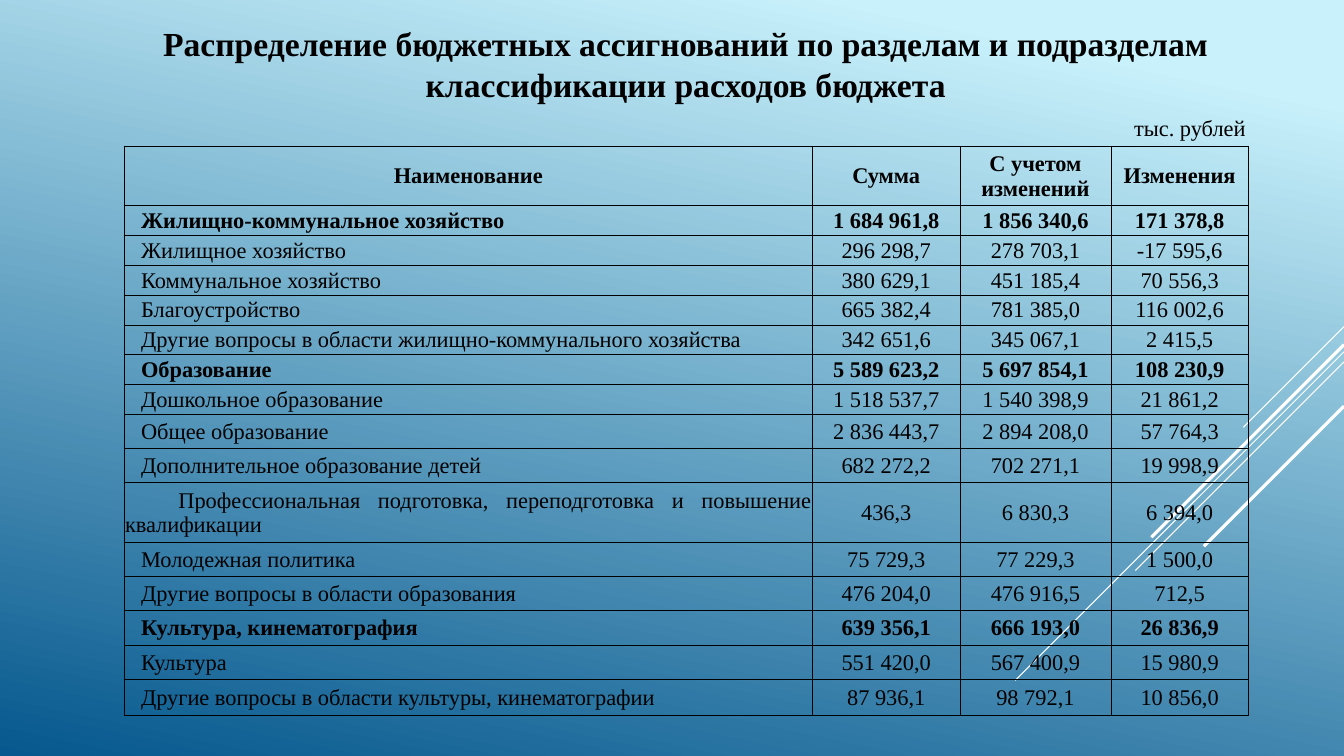
from lxml import etree
from pptx import Presentation, util as u
from pptx.dml.color import RGBColor
from pptx.enum import shapes, text
from pptx.oxml import ns

WIDTH, HEIGHT = 13.33, 7.5
FONT, BLACK, WHITE = "Times New Roman", "000000", "FFFFFF"

# Table grid, in inches
TABLE_LEFT, TABLE_TOP = 1.23, 1.45
COLUMNS = [6.83, 1.46, 1.5, 1.36]
TALL, LOW, MEDIUM = 0.59, 2.07 / 7, 0.34
ROW_HEIGHTS = [TALL] + [LOW] * 7 + [MEDIUM] * 2 + [TALL] + [MEDIUM] * 4 + [0.36]
INDENT, WRAPPED_INDENT = 0.16, 0.53

HEADINGS = ["Наименование", "Сумма", "С учетом изменений", "Изменения"]
SECTIONS = {"Жилищно-коммунальное хозяйство", "Образование", "Культура, кинематография"}
WRAPPED = "Профессиональная подготовка, переподготовка и повышение квалификации"
BUDGET = [
    ["Жилищно-коммунальное хозяйство", "1 684 961,8", "1 856 340,6", "171 378,8"],
    ["Жилищное хозяйство", "296 298,7", "278 703,1", "-17 595,6"],
    ["Коммунальное хозяйство", "380 629,1", "451 185,4", "70 556,3"],
    ["Благоустройство", "665 382,4", "781 385,0", "116 002,6"],
    ["Другие вопросы в области жилищно-коммунального хозяйства",
     "342 651,6", "345 067,1", "2 415,5"],
    ["Образование", "5 589 623,2", "5 697 854,1", "108 230,9"],
    ["Дошкольное образование", "1 518 537,7", "1 540 398,9", "21 861,2"],
    ["Общее образование", "2 836 443,7", "2 894 208,0", "57 764,3"],
    ["Дополнительное образование детей", "682 272,2", "702 271,1", "19 998,9"],
    [WRAPPED, "436,3", "6 830,3", "6 394,0"],
    ["Молодежная политика", "75 729,3", "77 229,3", "1 500,0"],
    ["Другие вопросы в области образования", "476 204,0", "476 916,5", "712,5"],
    ["Культура, кинематография", "639 356,1", "666 193,0", "26 836,9"],
    ["Культура", "551 420,0", "567 400,9", "15 980,9"],
    ["Другие вопросы в области культуры, кинематографии",
     "87 936,1", "98 792,1", "10 856,0"],
]

# Diagonal rays: start height on the right edge, length along each axis, line width
RAYS = [(3.24, 1, 0.75), (3.49, 3.26, 0.75), (3.59, 2.07, 0.75),
        (3.42, 1.91, 2.25), (4.03, 1.39, 2.25)]


def color(value):
    return RGBColor.from_string(value)


def place(shape, left, top, width, height):
    shape.left, shape.top = u.Inches(left), u.Inches(top)
    shape.width, shape.height = u.Inches(width), u.Inches(height)


def write(frame, words, size, bold=False, align=text.PP_ALIGN.CENTER):
    frame.word_wrap = True
    frame.text = words
    paragraph = frame.paragraphs[0]
    paragraph.alignment = align
    font = paragraph.font
    font.name, font.size, font.bold = FONT, u.Pt(size), bold
    font.color.rgb = color(BLACK)
    return paragraph


def paint_background(slide):
    fill = slide.background.fill
    fill.gradient()
    fill.gradient_angle = 258
    for stop, (position, shade) in zip(fill.gradient_stops,
                                       [(0.1, "C8F1FB"), (1, "06588E")]):
        stop.position, stop.color.rgb = position, color(shade)


def add_ray(slide, start, reach, weight):
    ray = slide.shapes.add_connector(
        shapes.MSO_CONNECTOR.STRAIGHT, u.Inches(WIDTH), u.Inches(start),
        u.Inches(WIDTH - reach), u.Inches(start + reach))
    ray.line.color.rgb, ray.line.width = color(WHITE), u.Pt(weight)
    etree.SubElement(ray._element.spPr, ns.qn("a:effectLst"))


def add_title(slide, words):
    title = slide.shapes.title
    place(title, 1.49, 0.18, 10.62, 0.91)
    write(title.text_frame, words, 24, bold=True)
    title.text_frame.vertical_anchor = text.MSO_ANCHOR.TOP
    title.text_frame.auto_size = text.MSO_AUTO_SIZE.NONE


def add_units(slide, words):
    units = slide.shapes.add_textbox(0, 0, 0, 0)
    place(units, 11.15, 1.08, 1.65, 0.37)
    write(units.text_frame, words, 16, align=text.PP_ALIGN.LEFT)


def outline(cell):
    properties = cell._tc.get_or_add_tcPr()
    for index, side in enumerate(["lnL", "lnR", "lnT", "lnB"]):
        border = etree.Element(ns.qn(f"a:{side}"), w=str(u.Pt(0.5)))
        solid = etree.SubElement(border, ns.qn("a:solidFill"))
        etree.SubElement(solid, ns.qn("a:srgbClr"), val=BLACK)
        properties.insert(index, border)


def fill_cell(cell, words, bold, align):
    cell.fill.background()
    outline(cell)
    cell.vertical_anchor = text.MSO_ANCHOR.MIDDLE
    cell.margin_left = cell.margin_right = cell.margin_top = u.Inches(0.01)
    cell.margin_bottom = 0
    return write(cell.text_frame, words, 16, bold, align)


def add_budget_table(slide):
    rows = [HEADINGS] + BUDGET
    table = slide.shapes.add_table(
        len(rows), len(COLUMNS), u.Inches(TABLE_LEFT), u.Inches(TABLE_TOP),
        u.Inches(sum(COLUMNS)), u.Inches(sum(ROW_HEIGHTS))).table
    table.horz_banding = False
    for column, width in zip(table.columns, COLUMNS):
        column.width = u.Inches(width)
    for row, height, values in zip(table.rows, ROW_HEIGHTS, rows):
        row.height = u.Inches(height)
        heading = values is HEADINGS
        bold = heading or values[0] in SECTIONS
        for index, (cell, words) in enumerate(zip(row.cells, values)):
            is_name = index == 0 and not heading
            align = text.PP_ALIGN.JUSTIFY if is_name else text.PP_ALIGN.CENTER
            paragraph = fill_cell(cell, words, bold, align)
            if is_name:
                indent = WRAPPED_INDENT if words == WRAPPED else INDENT
                properties = paragraph._p.get_or_add_pPr()
                properties.set("marL", "0")
                properties.set("indent", str(u.Inches(indent)))


def main():
    deck = Presentation()
    deck.slide_width, deck.slide_height = u.Inches(WIDTH), u.Inches(HEIGHT)
    slide = deck.slides.add_slide(deck.slide_layouts.get_by_name("Title Only"))

    # Backdrop
    paint_background(slide)
    for ray in RAYS:
        add_ray(slide, *ray)

    # Heading and units
    add_title(slide, "Распределение бюджетных ассигнований по разделам и подразделам "
                     "классификации расходов бюджета")
    add_units(slide, "тыс. рублей")

    # Budget figures
    add_budget_table(slide)
    deck.save("out.pptx")


if __name__ == "__main__":
    main()
